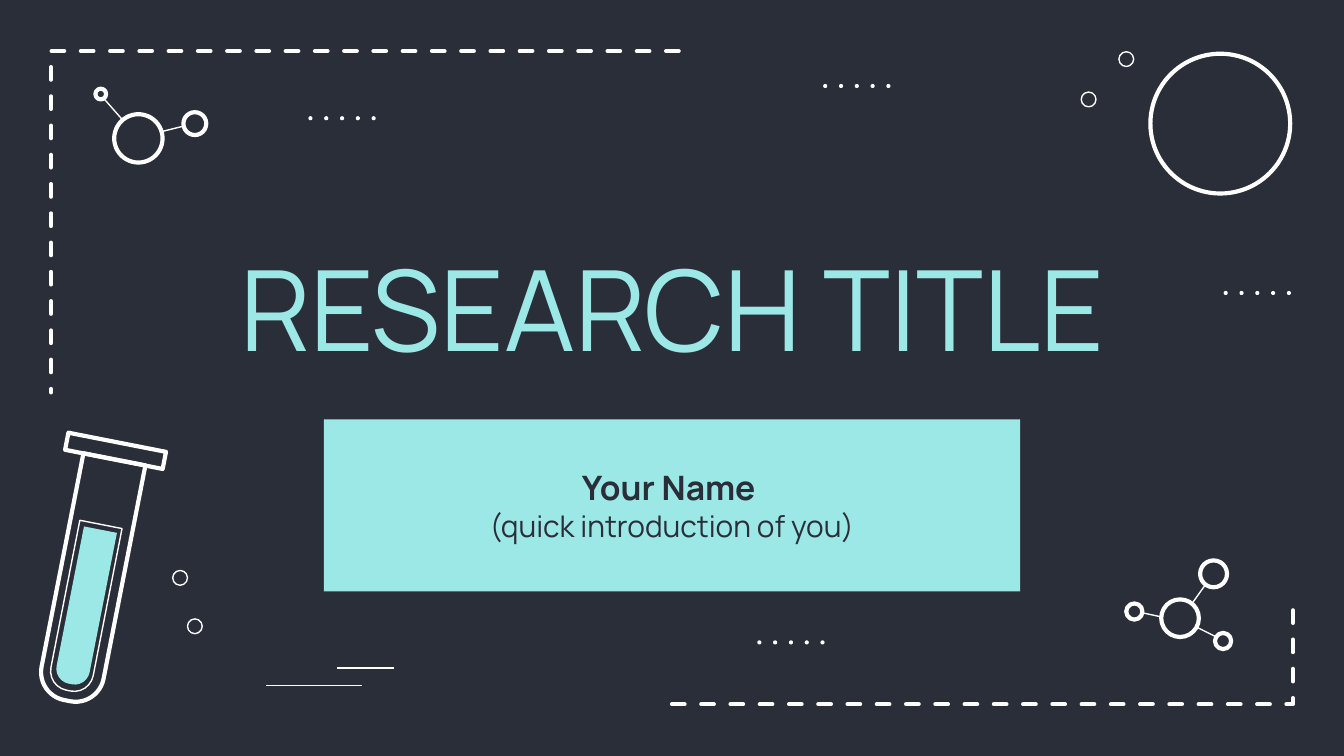
from lxml import etree
from pptx import Presentation
from pptx.dml.color import RGBColor
from pptx.enum.dml import MSO_LINE
from pptx.enum.shapes import MSO_CONNECTOR, MSO_SHAPE
from pptx.enum.text import MSO_ANCHOR, PP_ALIGN
from pptx.oxml.ns import qn
from pptx.util import Inches, Pt

OVAL = MSO_SHAPE.OVAL
RECTANGLE = MSO_SHAPE.RECTANGLE
ROUND_END = MSO_SHAPE.ROUND_2_SAME_RECTANGLE
STRAIGHT = MSO_CONNECTOR.STRAIGHT
DASH = MSO_LINE.DASH
MIDDLE = MSO_ANCHOR.MIDDLE
CENTER = PP_ALIGN.CENTER

COLORS = {"background": "2A2E38", "line": "FFFFFF", "accent": "9CE8E7"}
FONT = "Manrope"
THIN, THICK = 0.75, 2.25
TILT = 11.1

# Widescreen 16:9 slide
presentation = Presentation()
presentation.slide_width = Inches(10)
presentation.slide_height = Inches(10 * 9 / 16)
slide = presentation.slides.add_slide(presentation.slide_layouts[6])
slide.background.fill.solid()
slide.background.fill.fore_color.rgb = RGBColor.from_string(COLORS["background"])


def style(shape, fill=None, weight=None):
    shape.shadow.inherit = False
    if fill:
        shape.fill.solid()
        shape.fill.fore_color.rgb = RGBColor.from_string(COLORS[fill])
    else:
        shape.fill.background()
    if weight:
        shape.line.color.rgb = RGBColor.from_string(COLORS["line"])
        shape.line.width = Pt(weight)
    else:
        shape.line.fill.background()


def add_circle(x, y, diameter, weight, fill=None):
    """Draw a circle around the centre x, y."""
    left, top = x - diameter / 2, y - diameter / 2
    circle = slide.shapes.add_shape(
        OVAL, Inches(left), Inches(top), Inches(diameter), Inches(diameter))
    style(circle, fill, weight)


# Dashed corner frames
for corner in ([(5.05, 0.38), (0.38, 0.38), (0.38, 2.92)],
               [(5, 5.24), (9.62, 5.24), (9.62, 4.43)]):
    points = [(Inches(x), Inches(y)) for x, y in corner]
    builder = slide.shapes.build_freeform(*points[0])
    builder.add_line_segments(points[1:], close=False)
    frame = builder.convert_to_shape()
    style(frame, weight=THICK)
    frame.line.dash_style = DASH
    frame.line._get_or_add_ln().set("cap", "rnd")

# Floor strokes and molecule bonds
for x1, y1, x2, y2 in [
    (1.98, 5.1, 2.69, 5.1), (2.51, 4.97, 2.93, 4.97),
    (1.36, 0.94, 1.2, 0.98), (0.91, 0.89, 0.77, 0.73),
    (8.87, 4.49, 8.97, 4.35), (9.05, 4.74, 8.91, 4.67), (8.64, 4.59, 8.5, 4.56),
]:
    stroke = slide.shapes.add_connector(
        STRAIGHT, Inches(x1), Inches(y1), Inches(x2), Inches(y2))
    stroke.line.color.rgb = RGBColor.from_string(COLORS["line"])
    stroke.line.width = Pt(THIN)
    etree.SubElement(stroke._element.spPr, qn("a:effectLst"))

# Rows of five dots
DOT_STEP = 0.47 / 4
for x, y in [(9.12, 2.18), (6.14, 0.64), (5.65, 4.78), (2.31, 0.88)]:
    for index in range(5):
        add_circle(x + index * DOT_STEP, y, 0.02, THIN, "line")

# Molecule atoms and the large ring
for x, y, diameter in [
    (1.03, 1.03, 0.36), (0.75, 0.7, 0.08), (1.45, 0.92, 0.17),
    (8.78, 4.6, 0.28), (9.03, 4.27, 0.2), (9.1, 4.77, 0.12), (8.44, 4.55, 0.12),
    (9.08, 0.92, 1.04),
]:
    add_circle(x, y, diameter, THICK)

# Small bubbles
for x, y in [(8.38, 0.44), (8.1, 0.74), (1.45, 4.66), (1.34, 4.3)]:
    add_circle(x, y, 0.11, THIN)

# Test tube: glass, liquid, inner outline, cap; rounded ends face down
for kind, left, top, width, height, turn, fill, weight in [
    (ROUND_END, 0.44, 3.4, 0.47, 1.83, 180, None, THICK),
    (ROUND_END, 0.51, 3.93, 0.25, 1.17, 180, "accent", None),
    (ROUND_END, 0.47, 3.89, 0.32, 1.26, 180, None, THIN),
    (RECTANGLE, 0.49, 3.29, 0.74, 0.13, 0, None, THICK),
]:
    part = slide.shapes.add_shape(
        kind, Inches(left), Inches(top), Inches(width), Inches(height))
    part.rotation = turn + TILT
    if kind == ROUND_END:
        part.adjustments[0] = 0.45
    style(part, fill, weight)

# Title and presenter panel
title = slide.shapes.add_textbox(
    Inches(1.26), Inches(1.44), Inches(7.49), Inches(1.69))
panel = slide.shapes.add_shape(
    RECTANGLE, Inches(2.41), Inches(3.12), Inches(5.18), Inches(1.28))
style(panel, "accent")

for shape, lines in [
    (title, [("RESEARCH TITLE", 60, False, "accent")]),
    (panel, [("Your Name ", 18, True, "background"),
             ("(quick introduction of you)", 16, False, "background")]),
]:
    text_frame = shape.text_frame
    text_frame.word_wrap = True
    text_frame.vertical_anchor = MIDDLE
    text_frame.margin_left = text_frame.margin_right = Inches(0.1)
    text_frame.margin_top = text_frame.margin_bottom = Inches(0.1)
    text_frame.text = "\n".join(line[0] for line in lines)
    for paragraph, (_, size, bold, color) in zip(text_frame.paragraphs, lines):
        paragraph.alignment = CENTER
        font = paragraph.runs[0].font
        font.name = FONT
        font.size = Pt(size)
        font.bold = bold
        font.color.rgb = RGBColor.from_string(COLORS[color])

presentation.save("out.pptx")
